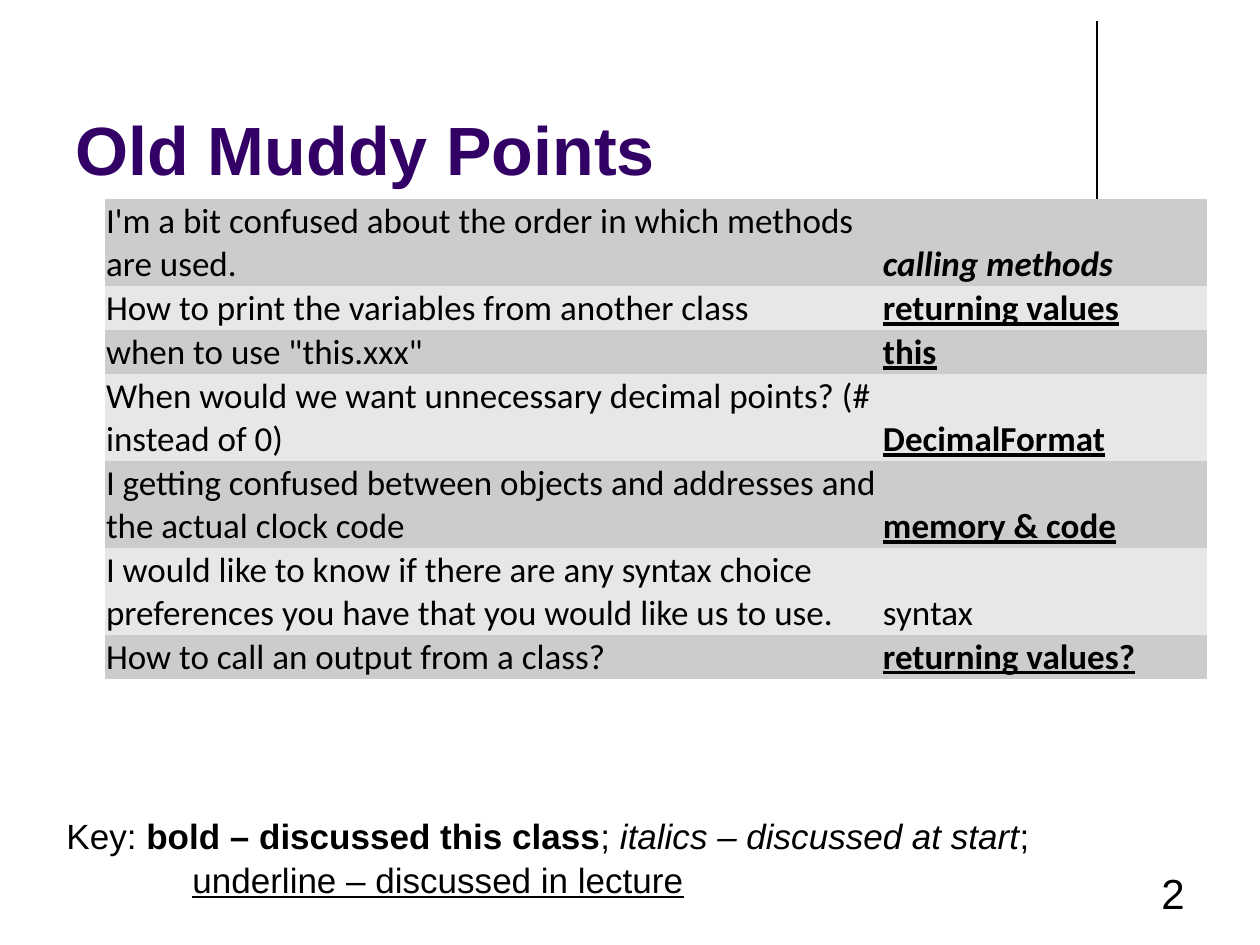
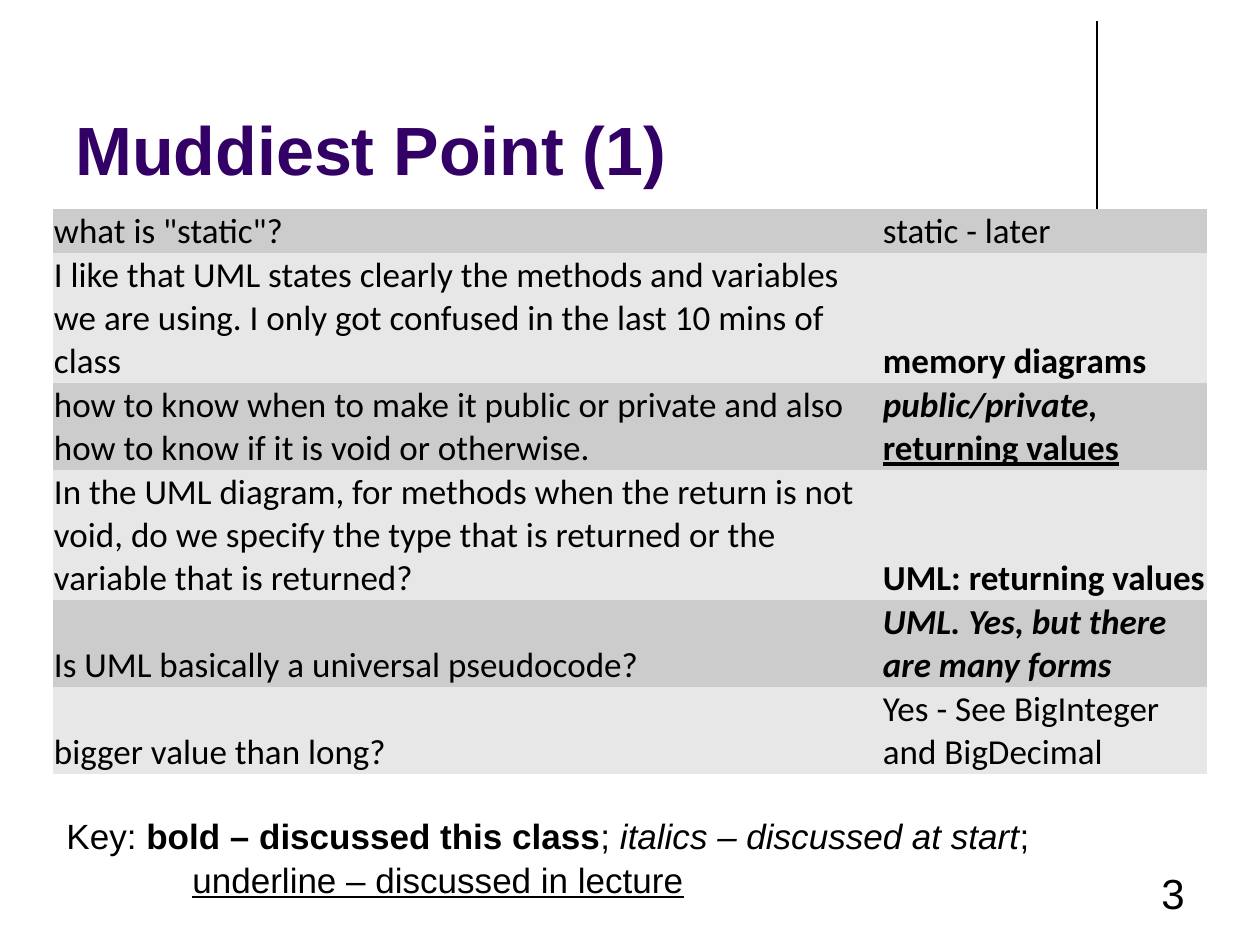
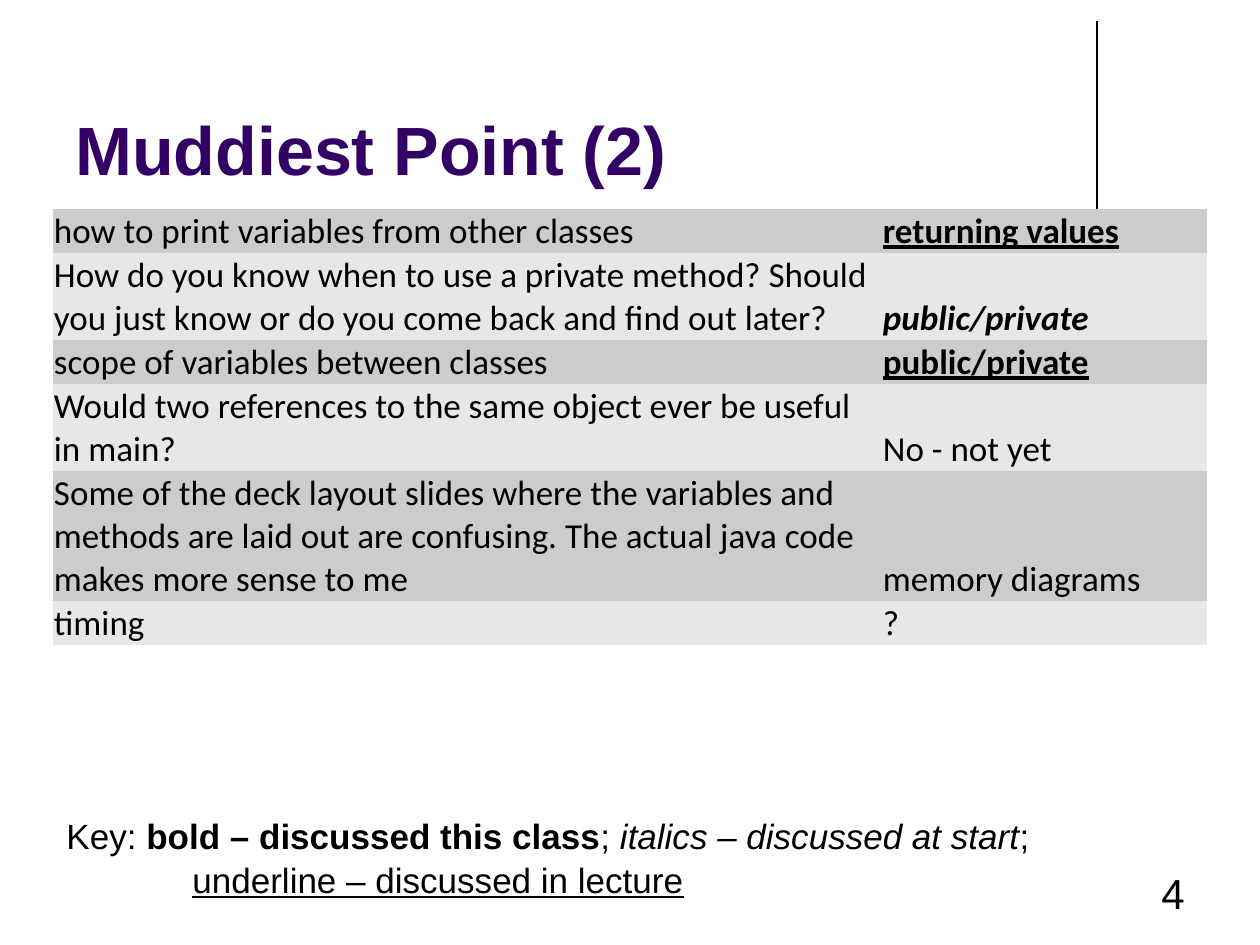
from dataclasses import dataclass

from lxml import etree
from pptx import Presentation
from pptx.dml.color import RGBColor
from pptx.enum.shapes import MSO_CONNECTOR
from pptx.enum.text import MSO_ANCHOR, PP_ALIGN
from pptx.oxml.ns import qn
from pptx.util import Pt

LEFT, RIGHT = PP_ALIGN.LEFT, PP_ALIGN.RIGHT
TOP, BOTTOM = MSO_ANCHOR.TOP, MSO_ANCHOR.BOTTOM
STRAIGHT = MSO_CONNECTOR.STRAIGHT
NO_STYLE_NO_GRID = "{2D5ABB26-0587-4C30-8999-92F81FD0307C}"


@dataclass(frozen=True)
class Theme:
    title_color: RGBColor = RGBColor(0x33, 0x00, 0x66)
    ink: RGBColor = RGBColor(0x00, 0x00, 0x00)
    bands: tuple = (RGBColor(0xCC, 0xCC, 0xCC), RGBColor(0xE7, 0xE7, 0xE7))
    font: str = "Arial"
    table_font: str = "Calibri"
    title_size: int = 39
    body_size: int = 20
    number_size: int = 24


THEME = Theme()


def px(length):
    """Convert pixels, 126 to the inch, into EMU."""
    return round(length * 914400 / 126)


def write(text_frame, text, *, font=THEME.font, size=THEME.body_size,
          color=THEME.ink, style="", align=LEFT, anchor=TOP):
    """Write a string or (text, style) runs; style letters are b, i and u."""
    runs = [(text, style)] if isinstance(text, str) else text
    text_frame.word_wrap = True
    text_frame.vertical_anchor = anchor
    paragraph = text_frame.paragraphs[0]
    paragraph.alignment = align
    for run_text, run_style in runs:
        if run_text == "\n":
            paragraph.add_line_break()
            continue
        run = paragraph.add_run()
        run.text = run_text
        run.font.name = font
        run.font.size = Pt(size)
        run.font.color.rgb = color
        run.font.bold = "b" in run_style
        run.font.italic = "i" in run_style
        run.font.underline = "u" in run_style
    return paragraph


# Content: title, table left and top, then rows of question, answer, line count
SLIDES = [
    ("Old Muddy Points", 105, 199, [
        ("I'm a bit confused about the order in which methods are used.",
         [("calling methods", "bi")], 2),
        ("How to print the variables from another class",
         [("returning values", "bu")], 1),
        ('when to use "this.xxx"', [("this", "bu")], 1),
        ("When would we want unnecessary decimal points? (# instead of 0)",
         [("DecimalFormat", "bu")], 2),
        ("I getting confused between objects and addresses and the actual "
         "clock code", [("memory & code", "bu")], 2),
        ("I would like to know if there are any syntax choice preferences "
         "you have that you would like us to use.", "syntax", 2),
        ("How to call an output from a class?",
         [("returning values?", "bu")], 1),
    ]),
    ("Muddiest Point (1)", 53, 209, [
        ('what is "static"?', "static - later", 1),
        ("I like that UML states clearly the methods and variables we are "
         "using. I only got confused in the last 10 mins of class",
         [("memory diagrams", "b")], 3),
        ("how to know when to make it public or private and also how to know "
         "if it is void or otherwise.",
         [("public/private, ", "bi"), ("returning values", "bu")], 2),
        ("In the UML diagram, for methods when the return is not void, do we "
         "specify the type that is returned or the variable that is returned?",
         [("UML: returning values", "b")], 3),
        ("Is UML basically a universal pseudocode?",
         [("UML. Yes, but there are many forms", "bi")], 2),
        ("bigger value than long?", "Yes - See BigInteger and BigDecimal", 2),
    ]),
    ("Muddiest Point (2)", 53, 209, [
        ("how to print variables from other classes",
         [("returning values", "bu")], 1),
        ("How do you know when to use a private method? Should you just know "
         "or do you come back and find out later?",
         [("public/private", "bi")], 2),
        ("scope of variables between classes", [("public/private", "bu")], 1),
        ("Would two references to the same object ever be useful in main?",
         "No - not yet", 2),
        ("Some of the deck layout slides where the variables and methods are "
         "laid out are confusing. The actual java code makes more sense to me",
         "memory diagrams", 3),
        ("timing", "?", 1),
    ]),
]
KEY = [("Key: ", ""), ("bold – discussed this class", "b"), ("; ", ""),
       ("italics – discussed at start", "i"), (";", ""), ("\n", ""),
       ("underline – discussed in lecture", "u")]
ANSWER_LEFT, TABLE_RIGHT = 882, 1207
LINE_HEIGHT = 43

presentation = Presentation()
presentation.slide_width, presentation.slide_height = px(1260), px(945)
blank_layout = presentation.slide_layouts[6]

for number, (title, table_left, table_top, rows) in enumerate(SLIDES, start=2):
    slide = presentation.slides.add_slide(blank_layout)
    shapes = slide.shapes

    # Vertical rule, partly behind the table
    rule = shapes.add_connector(STRAIGHT, px(1097), px(21), px(1097), px(230))
    rule.line.color.rgb = THEME.ink
    rule.line.width = Pt(0.75)
    etree.SubElement(rule._element.spPr, qn("a:effectLst"))

    # Title
    title_box = shapes.add_textbox(px(63), px(16), px(1040), px(179))
    write(title_box.text_frame, title, size=THEME.title_size,
          color=THEME.title_color, style="b", anchor=BOTTOM)

    # Questions and answers
    heights = [LINE_HEIGHT * lines + 1 for _, _, lines in rows]
    frame = shapes.add_table(len(rows), 2, px(table_left), px(table_top),
                             px(TABLE_RIGHT - table_left), px(sum(heights)))
    table = frame.table
    table.first_row = table.horz_banding = False
    table._tbl.tblPr.find(qn("a:tableStyleId")).text = NO_STYLE_NO_GRID
    table.columns[0].width = px(ANSWER_LEFT - table_left)
    table.columns[1].width = px(TABLE_RIGHT - ANSWER_LEFT)
    for row_index, (question, answer, _) in enumerate(rows):
        table.rows[row_index].height = px(heights[row_index])
        for column_index, text in enumerate((question, answer)):
            cell = table.cell(row_index, column_index)
            cell.fill.solid()
            cell.fill.fore_color.rgb = THEME.bands[row_index % 2]
            cell.margin_left = cell.margin_right = cell.margin_top = px(1)
            cell.margin_bottom = 0
            cell.vertical_anchor = BOTTOM
            write(cell.text_frame, text, font=THEME.table_font, anchor=BOTTOM)

    # Slide number
    number_box = shapes.add_textbox(px(903), px(861), px(294), px(63))
    write(number_box.text_frame, str(number), size=THEME.number_size,
          align=RIGHT)

    # Key, with its second line on a hanging indent
    key_box = shapes.add_textbox(px(54), px(806), px(1004), px(139))
    key_paragraph = write(key_box.text_frame, KEY)
    key_paragraph.line_spacing = 1.05
    key_properties = key_paragraph._p.get_or_add_pPr()
    key_properties.set("marL", str(px(126)))
    key_properties.set("indent", str(-px(126)))

presentation.save("out.pptx")
